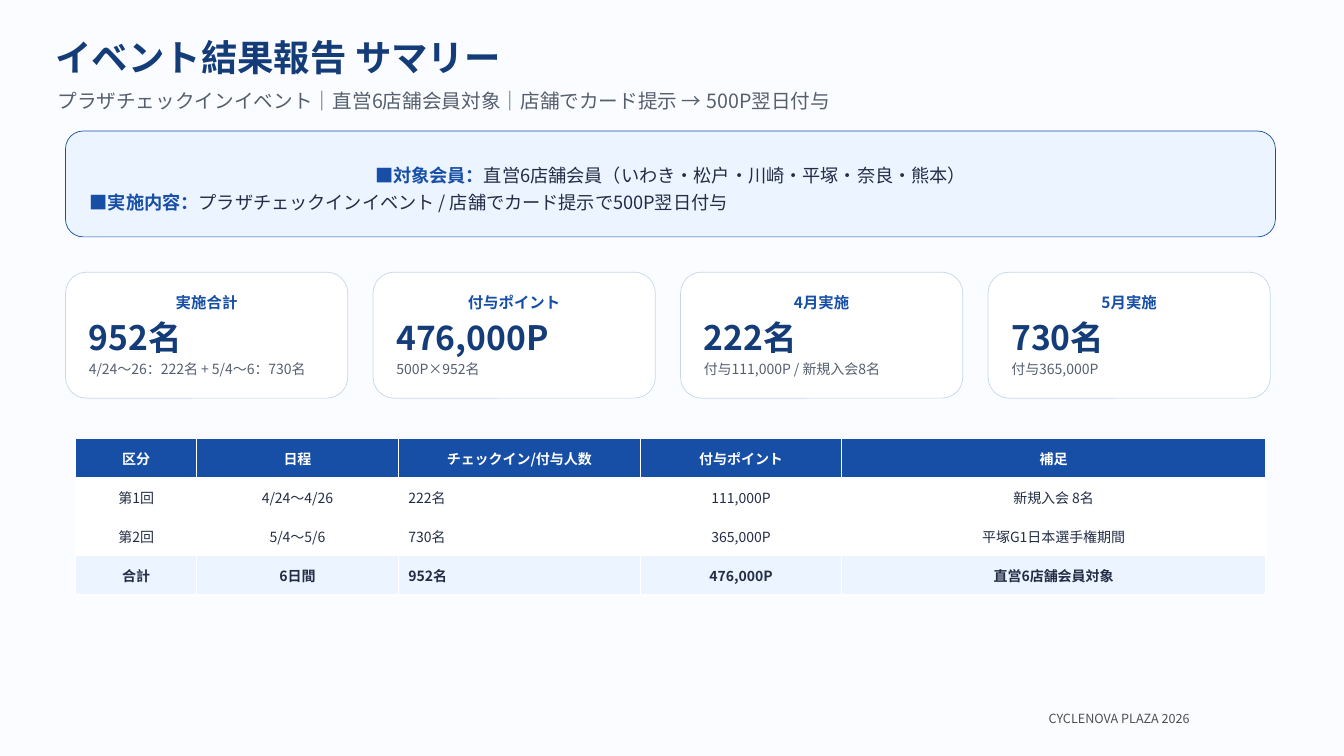
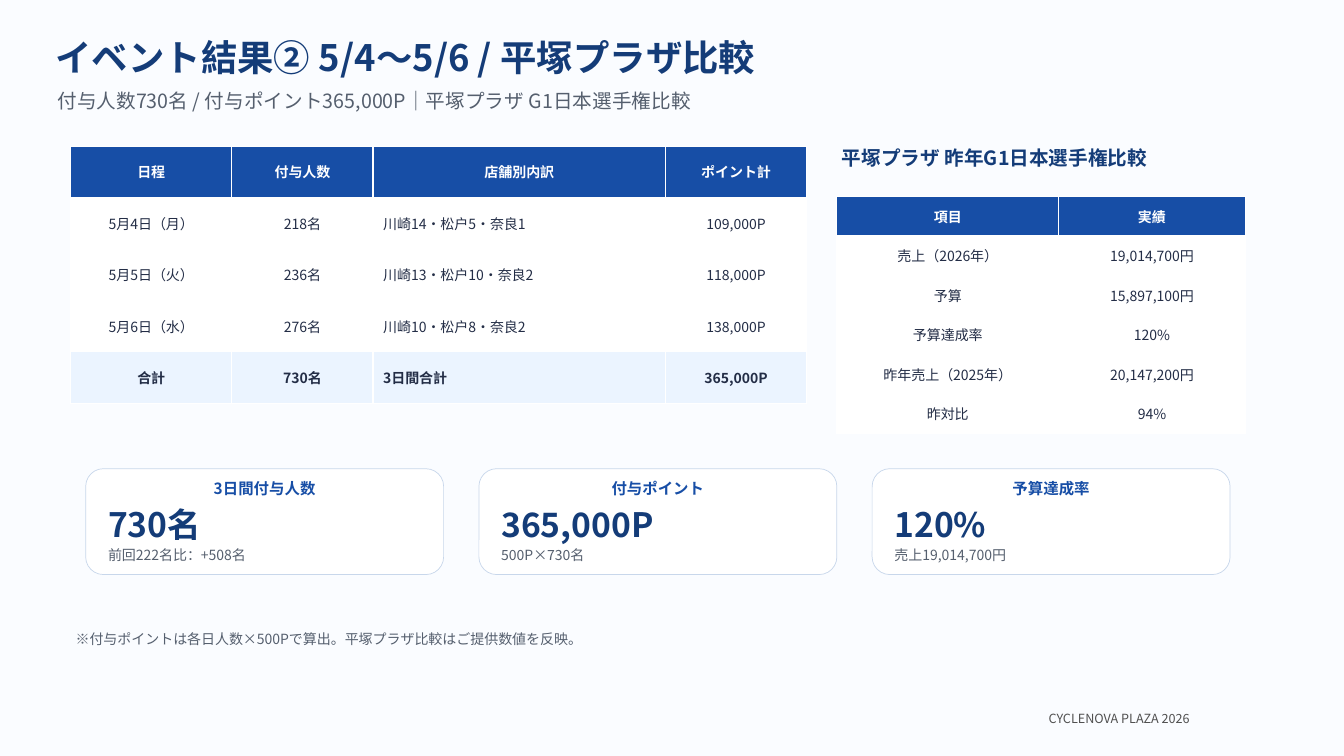
from dataclasses import dataclass

import pptx
import pptx.dml.color
import pptx.enum.shapes
import pptx.enum.text
import pptx.oxml
import pptx.oxml.ns
import pptx.util

Inches = pptx.util.Inches
Pt = pptx.util.Pt
ALIGN = pptx.enum.text.PP_ALIGN
MIDDLE = pptx.enum.text.MSO_ANCHOR.MIDDLE


@dataclass(frozen=True)
class Theme:
    font: str = "Noto Sans CJK JP"
    background: str = "FAFCFF"
    navy: str = "143C78"
    blue: str = "174EA6"
    pale: str = "EBF4FF"
    white: str = "FFFFFF"
    border: str = "C8D7EB"
    ink: str = "232D46"
    muted: str = "555F6E"
    footer: str = "505050"
    title_size: int = 26
    subtitle_size: int = 14
    banner_size: int = 13
    label_size: int = 11
    value_size: int = 24
    body_size: int = 10
    footer_size: int = 9


THEME = Theme()
FOOTER = "CYCLENOVA PLAZA 2026"

SUMMARY = {
    "title": "イベント結果報告 サマリー",
    "subtitle": "プラザチェックインイベント｜直営6店舗会員対象｜店舗でカード提示 → 500P翌日付与",
    "banner": [
        ("■対象会員：", "直営6店舗会員（いわき・松戸・川崎・平塚・奈良・熊本）"),
        ("■実施内容：", "プラザチェックインイベント / 店舗でカード提示で500P翌日付与"),
    ],
    "cards": [
        ("実施合計", "952名", "4/24〜26：222名 + 5/4〜6：730名"),
        ("付与ポイント", "476,000P", "500P×952名"),
        ("4月実施", "222名", "付与111,000P / 新規入会8名"),
        ("5月実施", "730名", "付与365,000P"),
    ],
    "rounds": [
        ("区分", "日程", "チェックイン/付与人数", "付与ポイント", "補足"),
        ("第1回", "4/24〜4/26", "222名", "111,000P", "新規入会 8名"),
        ("第2回", "5/4〜5/6", "730名", "365,000P", "平塚G1日本選手権期間"),
        ("合計", "6日間", "952名", "476,000P", "直営6店舗会員対象"),
    ],
}

COMPARISON = {
    "title": "イベント結果② 5/4〜5/6 / 平塚プラザ比較",
    "subtitle": "付与人数730名 / 付与ポイント365,000P｜平塚プラザ G1日本選手権比較",
    "days": [
        ("日程", "付与人数", "店舗別内訳", "ポイント計"),
        ("5月4日（月）", "218名", "川崎14・松戸5・奈良1", "109,000P"),
        ("5月5日（火）", "236名", "川崎13・松戸10・奈良2", "118,000P"),
        ("5月6日（水）", "276名", "川崎10・松戸8・奈良2", "138,000P"),
        ("合計", "730名", "3日間合計", "365,000P"),
    ],
    "sales_heading": "平塚プラザ 昨年G1日本選手権比較",
    "sales": [
        ("項目", "実績"),
        ("売上（2026年）", "19,014,700円"),
        ("予算", "15,897,100円"),
        ("予算達成率", "120%"),
        ("昨年売上（2025年）", "20,147,200円"),
        ("昨対比", "94%"),
    ],
    "cards": [
        ("3日間付与人数", "730名", "前回222名比：+508名"),
        ("付与ポイント", "365,000P", "500P×730名"),
        ("予算達成率", "120%", "売上19,014,700円"),
    ],
    "note": "※付与ポイントは各日人数×500Pで算出。平塚プラザ比較はご提供数値を反映。",
}


def color(value):
    return pptx.dml.color.RGBColor.from_string(value)


def style_paragraph(paragraph, size, text_color, bold=False, align=ALIGN.LEFT, before=0):
    paragraph.alignment = align
    if before:
        paragraph.space_before = Pt(before)
    font = paragraph.font
    font.size = Pt(size)
    font.bold = bold
    font.color.rgb = color(text_color)
    font.name = THEME.font
    properties = paragraph._p.pPr.find(pptx.oxml.ns.qn("a:defRPr"))
    east_asian = pptx.oxml.parse_xml(f'<a:ea {pptx.oxml.ns.nsdecls("a")} typeface="{THEME.font}"/>')
    properties.append(east_asian)


def set_insets(frame, left, top, right, bottom):
    frame.margin_left, frame.margin_top = Inches(left), Inches(top)
    frame.margin_right, frame.margin_bottom = Inches(right), Inches(bottom)


def add_label(slide, text, left, top, width, height, size, text_color, bold=False):
    box = slide.shapes.add_textbox(Inches(left), Inches(top), Inches(width), Inches(height))
    frame = box.text_frame
    set_insets(frame, 0, 0, 0, 0)
    frame.word_wrap = False
    frame.auto_size = pptx.enum.text.MSO_AUTO_SIZE.SHAPE_TO_FIT_TEXT
    frame.text = text
    style_paragraph(frame.paragraphs[0], size, text_color, bold)


def add_panel(slide, left, top, width, height, fill, line, insets):
    panel = slide.shapes.add_shape(
        pptx.enum.shapes.MSO_SHAPE.ROUNDED_RECTANGLE,
        Inches(left), Inches(top), Inches(width), Inches(height))
    panel.shadow.inherit = False
    panel.fill.solid()
    panel.fill.fore_color.rgb = color(fill)
    panel.line.color.rgb = color(line)
    panel.line.width = Pt(0.5)
    frame = panel.text_frame
    frame.word_wrap = True
    frame.vertical_anchor = MIDDLE
    set_insets(frame, *insets)
    return frame


def add_banner(slide, lines):
    frame = add_panel(slide, 0.65, 1.3, 12, 1.05, THEME.pale, THEME.blue, (0.19, 0.14, 0.19, 0.05))
    for index, (heading, detail) in enumerate(lines):
        paragraph = frame.add_paragraph() if index else frame.paragraphs[0]
        align, before = (ALIGN.LEFT, 4) if index else (ALIGN.CENTER, 0)
        style_paragraph(paragraph, THEME.banner_size, THEME.ink, align=align, before=before)
        run = paragraph.add_run()
        run.text = heading
        run.font.bold = True
        run.font.color.rgb = color(THEME.blue)
        paragraph.add_run().text = detail


def add_cards(slide, cards, left, top, width, height, gap):
    styles = [
        (THEME.label_size, THEME.blue, True, ALIGN.CENTER, 0),
        (THEME.value_size, THEME.navy, True, ALIGN.LEFT, 4),
        (THEME.body_size, THEME.muted, False, ALIGN.LEFT, 2),
    ]
    for index, texts in enumerate(cards):
        frame = add_panel(slide, left + index * (width + gap), top, width, height,
                          THEME.white, THEME.border, (0.17, 0.11, 0.17, 0.11))
        frame.text = "\n".join(texts)
        for paragraph, style in zip(frame.paragraphs, styles):
            style_paragraph(paragraph, *style)


def add_grid(slide, rows, left, top, widths, height, left_column=None, has_total=True):
    table = slide.shapes.add_table(
        len(rows), len(widths), Inches(left), Inches(top),
        Inches(sum(widths)), Inches(height)).table
    table.horz_banding = False
    for column, width in zip(table.columns, widths):
        column.width = Inches(width)
    for row_index, texts in enumerate(rows):
        is_header = row_index == 0
        is_total = has_total and row_index == len(rows) - 1
        fill = THEME.blue if is_header else THEME.pale if is_total else THEME.white
        text_color = THEME.white if is_header else THEME.ink
        for column_index, text in enumerate(texts):
            cell = table.cell(row_index, column_index)
            cell.fill.solid()
            cell.fill.fore_color.rgb = color(fill)
            cell.vertical_anchor = MIDDLE
            cell.text = text
            is_left = column_index == left_column and not is_header
            style_paragraph(cell.text_frame.paragraphs[0], THEME.body_size, text_color,
                            is_header or is_total, ALIGN.LEFT if is_left else ALIGN.CENTER)


def add_base_slide(presentation, content):
    slide = presentation.slides.add_slide(presentation.slide_layouts[6])
    slide.background.fill.solid()
    slide.background.fill.fore_color.rgb = color(THEME.background)
    add_label(slide, content["title"], 0.55, 0.35, 12.2, 0.45, THEME.title_size, THEME.navy, True)
    add_label(slide, content["subtitle"], 0.57, 0.88, 12, 0.35, THEME.subtitle_size, THEME.muted)
    add_label(slide, FOOTER, 10.4, 7.05, 2.5, 0.25, THEME.footer_size, THEME.footer)
    return slide


def build_summary(presentation):
    slide = add_base_slide(presentation, SUMMARY)
    add_banner(slide, SUMMARY["banner"])
    add_cards(slide, SUMMARY["cards"], 0.65, 2.7, 2.8, 1.25, 0.25)
    add_grid(slide, SUMMARY["rounds"], 0.75, 4.35, (1.2, 2, 2.4, 2, 4.2), 1.55, left_column=2)


def build_comparison(presentation):
    slide = add_base_slide(presentation, COMPARISON)
    add_grid(slide, COMPARISON["days"], 0.7, 1.45, (1.6, 1.4, 2.9, 1.4), 2.55, left_column=2)
    add_label(slide, COMPARISON["sales_heading"], 8.35, 1.45, 4, 0.35,
              THEME.subtitle_size, THEME.navy, True)
    add_grid(slide, COMPARISON["sales"], 8.3, 1.95, (2.2, 1.85), 2.35, has_total=False)
    add_cards(slide, COMPARISON["cards"], 0.85, 4.65, 3.55, 1.05, 0.35)
    add_label(slide, COMPARISON["note"], 0.75, 6.25, 11.7, 0.35, THEME.body_size, THEME.muted)


def main():
    presentation = pptx.Presentation()
    presentation.slide_width = Inches(13.33)
    presentation.slide_height = Inches(7.5)
    build_summary(presentation)
    build_comparison(presentation)
    presentation.save("out.pptx")


if __name__ == "__main__":
    main()
